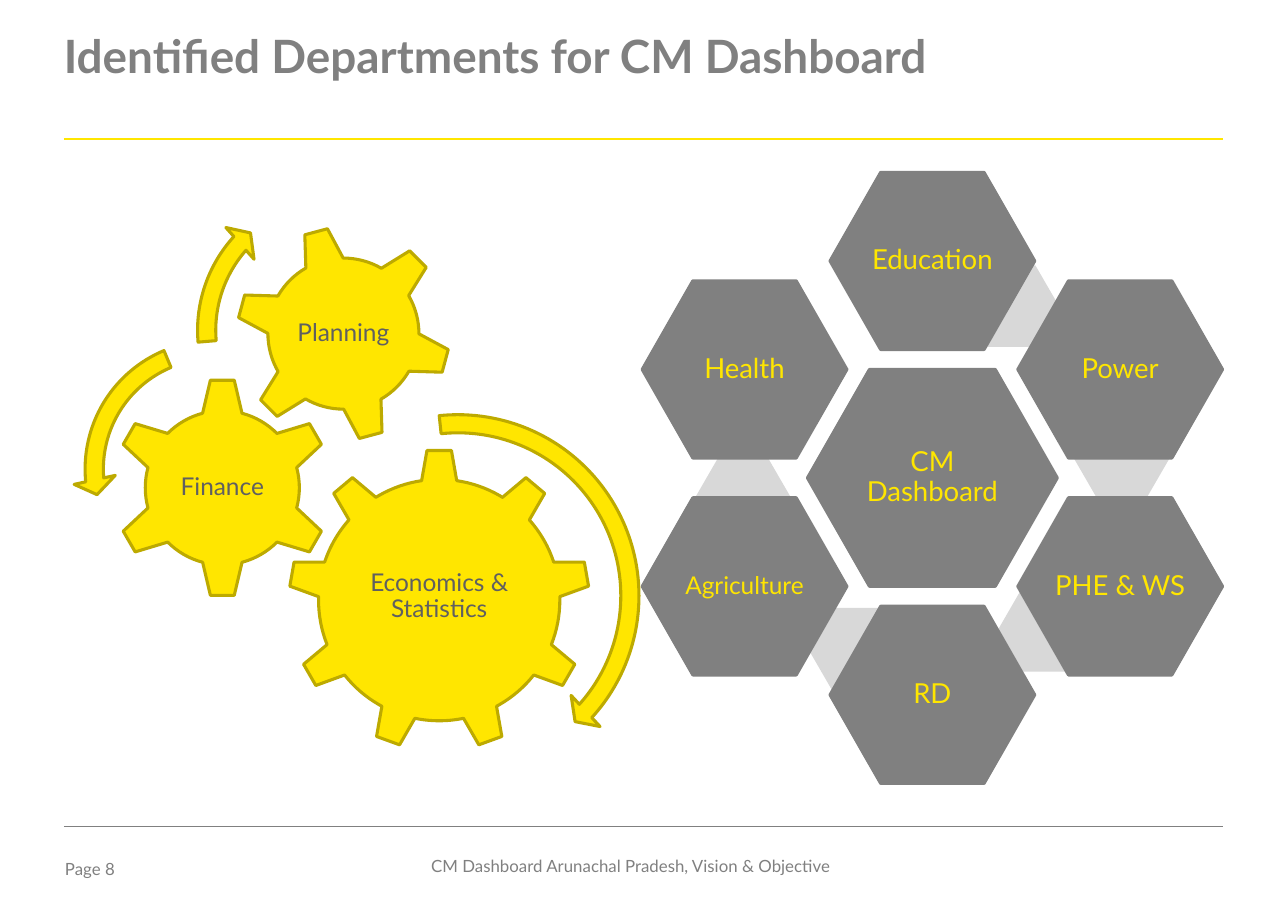
from math import cos, radians, sin

from lxml.etree import SubElement
from pptx import Presentation
from pptx.dml.color import RGBColor
from pptx.enum.shapes import MSO_CONNECTOR as CONNECTOR, MSO_SHAPE as SHAPE
from pptx.enum.text import MSO_ANCHOR as ANCHOR, PP_ALIGN as ALIGN
from pptx.oxml.ns import qn
from pptx.util import Inches, Pt

GREY = RGBColor(0x80, 0x80, 0x80)
PALE_GREY = RGBColor(0xD8, 0xD8, 0xD8)
DARK_GREY = RGBColor(0x60, 0x60, 0x60)
YELLOW = RGBColor(0xFF, 0xE6, 0x00)
OLIVE = RGBColor(0xBD, 0xAA, 0x00)


class DashboardPage:
    """Holds the font and the slide being drawn."""

    def __init__(self, page, font="Lato"):
        self.page = page
        self.font = font

    def fill_text(self, box, text, size, color, align=ALIGN.CENTER, spacing=0.9,
                  anchor=ANCHOR.MIDDLE, bold=False):
        frame = box.text_frame
        frame.word_wrap = True
        frame.vertical_anchor = anchor
        frame.margin_left = frame.margin_right = Inches(0)
        frame.margin_top = frame.margin_bottom = Inches(0)
        para = frame.paragraphs[0]
        para.alignment = align
        para.line_spacing = spacing
        span = para.add_run()
        span.text = text
        span.font.name = self.font
        span.font.size = Pt(size)
        span.font.bold = bold
        span.font.color.rgb = color

    def label(self, left, top, width, height, *content, **style):
        box = self.page.shapes.add_textbox(
            Inches(left), Inches(top), Inches(width), Inches(height))
        self.fill_text(box, *content, **style)

    def rule(self, y, color, weight):
        line = self.page.shapes.add_connector(
            CONNECTOR.STRAIGHT, Inches(0.58), Inches(y), Inches(11.11), Inches(y))
        line.line.color.rgb = color
        line.line.width = Pt(weight)
        SubElement(line._element.spPr, qn("a:effectLst"))

    def shape(self, kind, center_x, center_y, width, height, fill,
              outline=None, adjust=(), turn=0):
        shape = self.page.shapes.add_shape(
            kind, Inches(center_x - width / 2), Inches(center_y - height / 2),
            Inches(width), Inches(height))
        shape.shadow.inherit = False
        shape.fill.solid()
        shape.fill.fore_color.rgb = fill
        if outline is None:
            shape.line.fill.background()
        else:
            shape.line.color.rgb = outline
            shape.line.width = Pt(2)
        for index, value in enumerate(adjust):
            shape.adjustments[index] = value
        shape.rotation = turn
        return shape

    def hexagon(self, center_x, center_y, width, height, text, size=18):
        box = self.shape(SHAPE.HEXAGON, center_x, center_y, width, height,
                         GREY, GREY, adjust=[0.286])
        self.fill_text(box, text, size, YELLOW)

    def gear(self, kind, center_x, center_y, size, text, label_y, label_width, turn=0):
        self.shape(kind, center_x, center_y, size, size, YELLOW, OLIVE, turn=turn)
        self.label(center_x - label_width / 2, label_y - 0.5, label_width, 1,
                   text, 16, DARK_GREY)


def main():
    deck = Presentation()
    deck.slide_width, deck.slide_height = Inches(11.7), Inches(8.3)
    board = DashboardPage(deck.slides.add_slide(deck.slide_layouts[6]))

    # Title and footer
    board.rule(7.5, GREY, 0.25)
    board.label(0.59, 7.8, 0.79, 0.22, "Page 8", 11, GREY,
                align=ALIGN.LEFT, spacing=1, anchor=ANCHOR.TOP)
    board.label(2.14, 7.77, 7.18, 0.21,
                "CM Dashboard Arunachal Pradesh, Vision & Objective", 11, GREY,
                spacing=1, anchor=ANCHOR.TOP)
    board.rule(1.26, YELLOW, 1.5)
    board.label(0.58, 0.33, 10.53, 0.94, "Identified Departments for CM Dashboard",
                30, GREY, align=ALIGN.LEFT, spacing=0.85, anchor=ANCHOR.TOP, bold=True)

    # Pale links behind the hexagons
    links = [(9.19, 2.78), (10.19, 4.17), (9.49, 5.73), (7.77, 5.89), (6.75, 4.51)]
    for x, y in links:
        board.shape(SHAPE.HEXAGON, x, y, 0.86, 0.74, PALE_GREY, adjust=[0.289])

    # Departments clockwise around the dashboard
    hub_x, hub_y, radius = 8.47, 4.34, 1.97
    board.hexagon(hub_x, hub_y, 2.27, 1.97, "CM Dashboard")
    departments = ["Education", "Power", "PHE & WS", "RD", "Agriculture", "Health"]
    for step, name in enumerate(departments):
        angle = radians(60 * step)
        board.hexagon(hub_x + radius * sin(angle), hub_y - radius * cos(angle),
                      1.86, 1.61, name, 16 if name == "Agriculture" else 18)

    # Gears
    board.gear(SHAPE.GEAR_9, 3.99, 5.45, 2.74, "Economics & Statistics", 5.42, 1.64)
    board.gear(SHAPE.GEAR_6, 2.02, 4.43, 2, "Finance", 4.43, 1)
    board.gear(SHAPE.GEAR_6, 3.12, 3.03, 1.96, "Planning", 3.03, 1.1, turn=345)

    # Arrows showing how the gears turn
    arrows = [
        (SHAPE.CIRCULAR_ARROW, 4.16, 5.41, 3.51, [0.047, 2.99, 25.243, 158.438, 0.055]),
        (SHAPE.LEFT_CIRCULAR_ARROW, 1.94, 4.26, 2.55,
         [0.065, 4.3, 104.891, 148.378, 0.075]),
        (SHAPE.CIRCULAR_ARROW, 3.06, 3, 2.75, [0.06, 3.941, 133.138, 105.082, 0.07]),
    ]
    for kind, x, y, size, adjust in arrows:
        board.shape(kind, x, y, size, size, YELLOW, OLIVE, adjust=adjust)

    deck.save("out.pptx")


if __name__ == "__main__":
    main()
